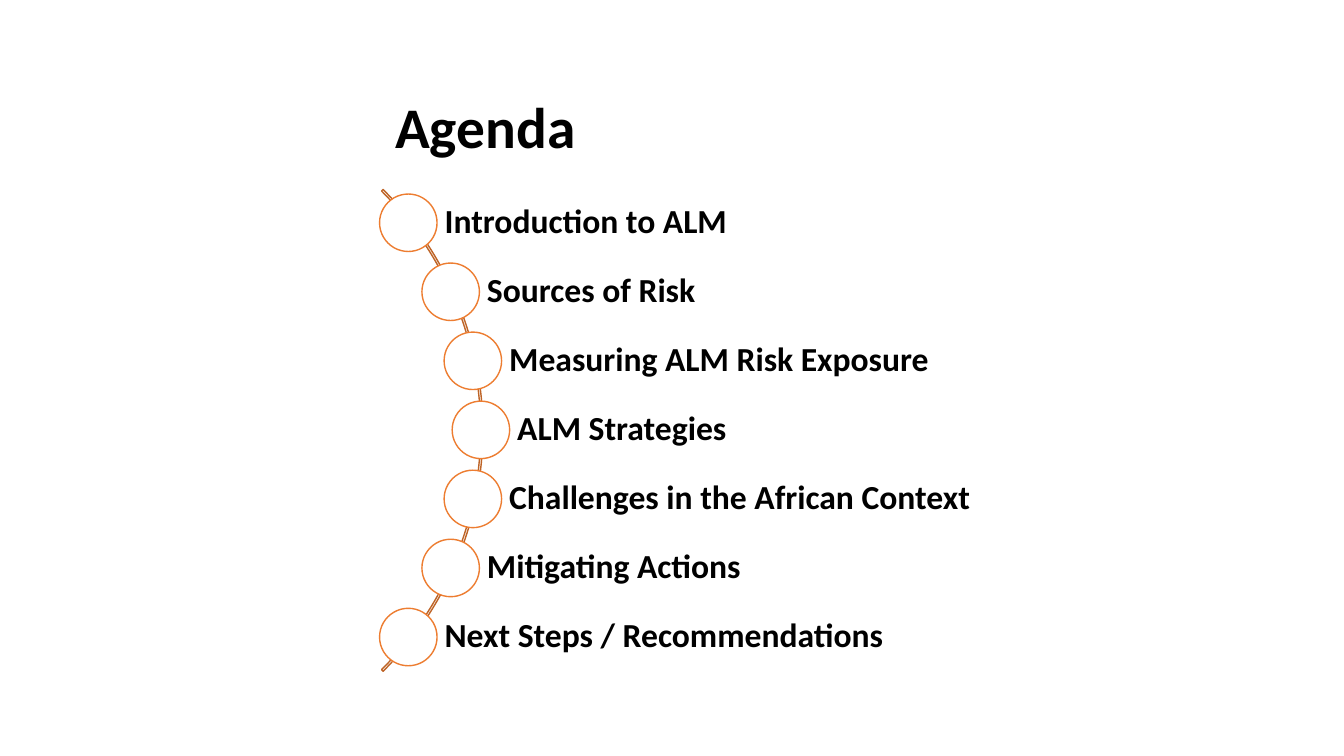
from pptx import Presentation
from pptx.dml.color import RGBColor
from pptx.enum import shapes, text
from pptx.util import Inches, Pt

TOPICS = [
    "Introduction to ALM",
    "Sources of Risk",
    "Measuring ALM Risk Exposure",
    "ALM Strategies",
    "Challenges in the African Context",
    "Mitigating Actions",
    "Next Steps / Recommendations",
]
UPPER_CENTRES = [4.05, 4.47, 4.69]
CENTRES = UPPER_CENTRES + [4.77] + UPPER_CENTRES[::-1]
RIGHT_EDGE = 12.35
FIRST_Y, STEP = 2.21, 0.685
CIRCLE, LABEL_H = 0.57, 0.46


def color(value):
    return RGBColor.from_string(value)


class AgendaSlide:
    font = "Calibri"
    ink = "000000"
    circle_line = "ED7D31"
    arc_line = "BE6427"

    def __init__(self, prs):
        self.slide = prs.slides.add_slide(prs.slide_layouts[6])

    def label(self, words, x, y, w, h, size, left, inset):
        """Bold, vertically centred text; left is the left inset."""
        tf = self.slide.shapes.add_textbox(
            Inches(x), Inches(y), Inches(w), Inches(h)).text_frame
        tf.word_wrap = True
        tf.vertical_anchor = text.MSO_ANCHOR.MIDDLE
        tf.margin_left = Inches(left)
        tf.margin_top = tf.margin_right = tf.margin_bottom = Inches(inset)
        p = tf.paragraphs[0]
        p.text = words
        p.line_spacing = 0.9
        p.font.name = self.font
        p.font.size = Pt(size)
        p.font.bold = True
        p.font.color.rgb = color(self.ink)

    def outline(self, kind, x, y, size, line, fill=None):
        """Square-framed preset shape with a 1 pt line."""
        sp = self.slide.shapes.add_shape(
            kind, Inches(x), Inches(y), Inches(size), Inches(size))
        sp.shadow.inherit = False
        if fill:
            sp.fill.solid()
            sp.fill.fore_color.rgb = color(fill)
        else:
            sp.fill.background()
        sp.line.color.rgb = color(line)
        sp.line.width = Pt(1)
        return sp

    def arc(self, x, y, size):
        sp = self.outline(shapes.MSO_SHAPE.BLOCK_ARC, x, y, size, self.arc_line)
        for i, value in enumerate((189, 27, 0.0032)):
            sp.adjustments[i] = value

    def topic(self, words, x, y):
        """Label and circle, both centred on y, the circle also on x."""
        self.label(words, x, y - LABEL_H / 2, RIGHT_EDGE - x, LABEL_H,
                   24, 0.36, 0.07)
        self.outline(shapes.MSO_SHAPE.OVAL, x - CIRCLE / 2, y - CIRCLE / 2,
                     CIRCLE, self.circle_line, "FFFFFF")


def main():
    prs = Presentation()
    prs.slide_width, prs.slide_height = Inches(13.33), Inches(7.5)
    s = AgendaSlide(prs)
    s.label("Agenda", 3.75, 0.8, 8.61, 0.97, 41, 0.17, 0.17)
    s.arc(-1.97, 0.89, 6.76)
    for i, (words, x) in enumerate(zip(TOPICS, CENTRES)):
        s.topic(words, x, FIRST_Y + i * STEP)
    prs.save("out.pptx")


if __name__ == "__main__":
    main()
